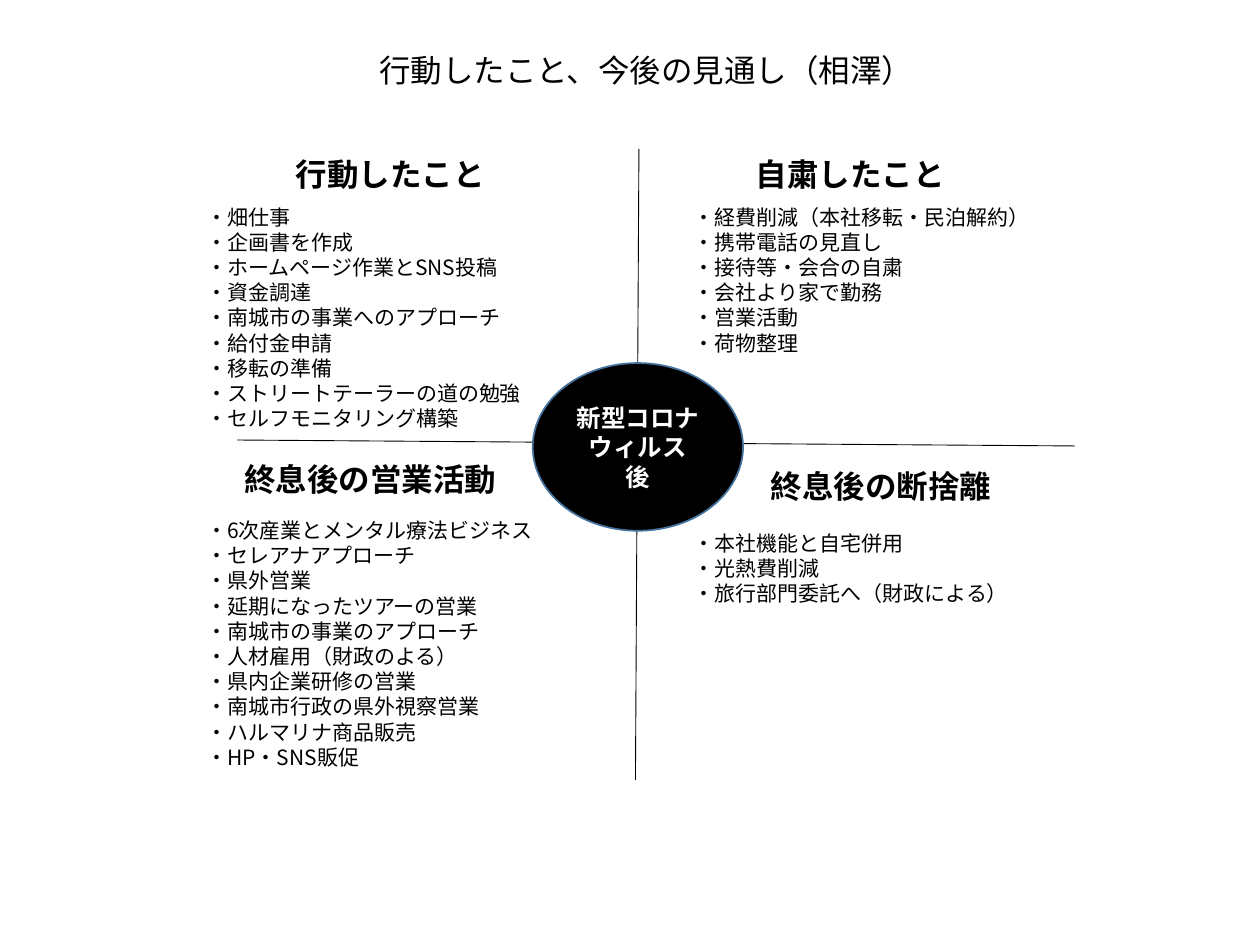
import pptx
import pptx.dml.color
import pptx.enum.shapes
import pptx.enum.text
import pptx.oxml.ns
import pptx.oxml.xmlchemy
import pptx.util

Cm = pptx.util.Cm
Pt = pptx.util.Pt
ALIGN = pptx.enum.text.PP_ALIGN
ANCHOR = pptx.enum.text.MSO_ANCHOR

FONT = "Noto Sans CJK JP"
LINE_RATIO = 1.2
COLOURS = {"ink": "000000", "light": "FFFFFF", "outline": "43739E"}

QUADRANTS = [
    {
        "box": (3.91, 3.0), "heading": "行動したこと", "heading_left": 1.8,
        "list_top": 0.99, "width": 8.86,
        "items": ["畑仕事", "企画書を作成", "ホームページ作業とSNS投稿", "資金調達",
                  "南城市の事業へのアプローチ", "給付金申請", "移転の準備",
                  "ストリートテーラーの道の勉強", "セルフモニタリング構築"],
    },
    {
        "box": (13.74, 3.0), "heading": "自粛したこと", "heading_left": 1.25,
        "list_top": 0.99, "width": 8.86,
        "items": ["経費削減（本社移転・民泊解約）", "携帯電話の見直し", "接待等・会合の自粛",
                  "会社より家で勤務", "営業活動", "荷物整理"],
    },
    {
        "box": (3.91, 9.14), "heading": "終息後の営業活動", "heading_left": 0.76,
        "list_top": 1.17, "width": 7.32,
        "items": ["6次産業とメンタル療法ビジネス", "セレアナアプローチ", "県外営業",
                  "延期になったツアーの営業", "南城市の事業のアプローチ", "人材雇用（財政のよる）",
                  "県内企業研修の営業", "南城市行政の県外視察営業", "ハルマリナ商品販売",
                  "HP・SNS販促"],
    },
    {
        "box": (13.74, 9.3), "heading": "終息後の断捨離", "heading_left": 1.55,
        "list_top": 1.27, "width": 8.26,
        "items": ["本社機能と自宅併用", "光熱費削減", "旅行部門委託へ（財政による）"],
    },
]


def colour(name):
    return pptx.dml.color.RGBColor.from_string(COLOURS[name])


def write_paragraphs(text_frame, lines, size, bold=False, ink="ink",
                     align=ALIGN.LEFT, anchor=ANCHOR.TOP):
    text_frame.text = "\n".join(lines)
    text_frame.word_wrap = True
    text_frame.auto_size = pptx.enum.text.MSO_AUTO_SIZE.NONE
    text_frame.vertical_anchor = anchor
    for paragraph in text_frame.paragraphs:
        paragraph.alignment = align
        paragraph.line_spacing = Pt(size * LINE_RATIO)
        paragraph.space_before = Pt(0)
        for run in paragraph.runs:
            run.font.name = FONT
            run.font.size = Pt(size)
            run.font.bold = bold
            run.font.color.rgb = colour(ink)
            east_asian = pptx.oxml.xmlchemy.OxmlElement("a:ea")
            east_asian.set("typeface", FONT)
            run.font._element.find(pptx.oxml.ns.qn("a:latin")).addnext(east_asian)


def add_text(slide, left, top, width, height, lines, size, bold=False):
    text_box = slide.shapes.add_textbox(Cm(left), Cm(top), Cm(width), Cm(height))
    write_paragraphs(text_box.text_frame, lines, size, bold)


def place_title(slide, left, top, width, height):
    title = slide.shapes.title
    title.left, title.top, title.width, title.height = map(Cm, (left, top, width, height))
    write_paragraphs(title.text_frame, ["行動したこと、今後の見通し（相澤）"], 18)


def add_axis(slide, start, end):
    axis = slide.shapes.add_connector(
        pptx.enum.shapes.MSO_CONNECTOR.STRAIGHT, *map(Cm, start + end))
    axis.line.color.rgb = colour("ink")
    axis.line.width = Pt(0.5)
    axis._element.spPr.append(pptx.oxml.xmlchemy.OxmlElement("a:effectLst"))


def add_cross(slide, left, top, width, height):
    add_axis(slide, (left, top + 5.87), (left + width, top + 5.99))
    add_axis(slide, (left + 8.03, top + height), (left + 8.1, top))


def add_centre(slide, left, top, width, height):
    centre = slide.shapes.add_shape(
        pptx.enum.shapes.MSO_SHAPE.OVAL, *map(Cm, (left, top, width, height)))
    centre.shadow.inherit = False
    centre.fill.solid()
    centre.fill.fore_color.rgb = colour("ink")
    centre.line.color.rgb = colour("outline")
    centre.line.width = Pt(1)
    write_paragraphs(centre.text_frame, ["新型コロナウィルス", "後"], 14, True,
                     "light", ALIGN.CENTER, ANCHOR.MIDDLE)


def add_quadrant(slide, quadrant):
    left, top = quadrant["box"]
    items = quadrant["items"]
    add_text(slide, left + quadrant["heading_left"], top, 8, 1.03,
             [quadrant["heading"]], 18, True)
    add_text(slide, left, top + quadrant["list_top"], quadrant["width"],
             0.25 + 0.51 * len(items), ["・" + item for item in items], 12)


def main():
    presentation = pptx.Presentation()
    presentation.slide_width, presentation.slide_height = Cm(25.4), Cm(19.05)
    slide = presentation.slides.add_slide(presentation.slide_layouts[5])
    place_title(slide, 7.39, 0.91, 12.62, 1.03)
    add_cross(slide, 4.78, 3.0, 16.89, 12.72)
    add_centre(slide, 10.74, 7.32, 4.24, 3.38)
    for quadrant in QUADRANTS:
        add_quadrant(slide, quadrant)
    presentation.save("out.pptx")


if __name__ == "__main__":
    main()
